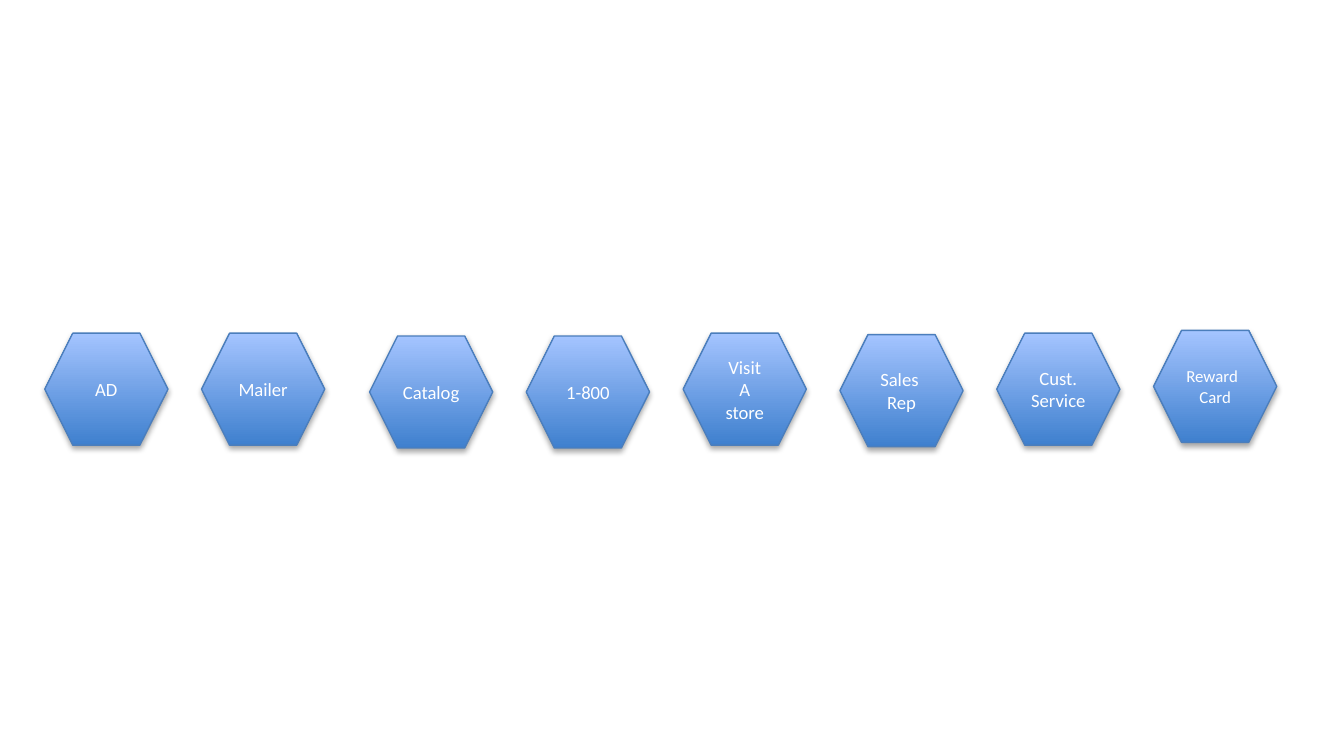
from lxml.etree import SubElement
from pptx import Presentation
from pptx.dml.color import RGBColor
from pptx.enum.shapes import MSO_SHAPE
from pptx.enum.text import MSO_ANCHOR, PP_ALIGN
from pptx.oxml.ns import qn
from pptx.util import Pt

PX = 9525  # EMU per px, 96 px to the inch
COLORS = {
    "bottom": "3F80CE",
    "top": "A4C4FF",
    "outline": "4B7EBC",
    "shadow": "000000",
    "text": "FFFFFF",
}


def rgb(name):
    return RGBColor.from_string(COLORS[name])


def write(paragraph, text, *, size, align=PP_ALIGN.CENTER, color="text", font="Calibri"):
    paragraph.alignment = align
    run = paragraph.add_run()
    run.text = text
    run.font.name = font
    run.font.size = Pt(size)
    run.font.color.rgb = rgb(color)


class TouchpointSlide:
    WIDTH, HEIGHT = 88, 80

    def __init__(self, slide):
        self.slide = slide

    def hexagon(self, left, top, lines, size=10, first_align=PP_ALIGN.CENTER):
        hexagon = self.slide.shapes.add_shape(
            MSO_SHAPE.HEXAGON, left * PX, top * PX, self.WIDTH * PX, self.HEIGHT * PX)
        # Light top fading to a darker bottom
        hexagon.fill.gradient()
        hexagon.fill.gradient_angle = 90
        for stop, name, position in zip(hexagon.fill.gradient_stops, ("bottom", "top"), (0, 1)):
            stop.color.rgb = rgb(name)
            stop.position = position
        hexagon.line.color.rgb = rgb("outline")
        hexagon.line.width = Pt(0.75)
        self.drop_shadow(hexagon)

        frame = hexagon.text_frame
        frame.word_wrap = True
        frame.vertical_anchor = MSO_ANCHOR.MIDDLE
        for i, line in enumerate(lines):
            paragraph = frame.add_paragraph() if i else frame.paragraphs[0]
            write(paragraph, line, size=size, align=PP_ALIGN.CENTER if i else first_align)

    def drop_shadow(self, shape):
        shape.shadow.inherit = False
        effects = shape._element.spPr.find(qn("a:effectLst"))
        shadow = SubElement(effects, qn("a:outerShdw"), blurRad=str(Pt(3.1)),
                            dist=str(Pt(1.8)), dir="5400000", rotWithShape="0")
        color = SubElement(shadow, qn("a:srgbClr"), val=COLORS["shadow"])
        SubElement(color, qn("a:alpha"), val="35000")


def main():
    deck = Presentation()
    deck.slide_width, deck.slide_height = 960 * PX, 540 * PX
    page = TouchpointSlide(deck.slides.add_slide(deck.slide_layouts[6]))

    # Two evenly spaced groups: (start, [(top, lines, format)])
    pitch = 112
    groups = [
        (32, [(238, ["AD"], {}),
              (238, ["Mailer"], {})]),
        (264, [(240, ["Catalog"], {}),
               (240, ["1-800"], {}),
               (238, ["Visit", "A", "store"], {}),
               (239, ["Sales ", "Rep"], {}),
               (238, ["Cust.", "Service"], {}),
               (236, ["Reward", "Card"], {"size": 9, "first_align": PP_ALIGN.LEFT})]),
    ]
    for start, touchpoints in groups:
        for i, (top, lines, style) in enumerate(touchpoints):
            page.hexagon(start + i * pitch, top, lines, **style)

    deck.save("out.pptx")


if __name__ == "__main__":
    main()
